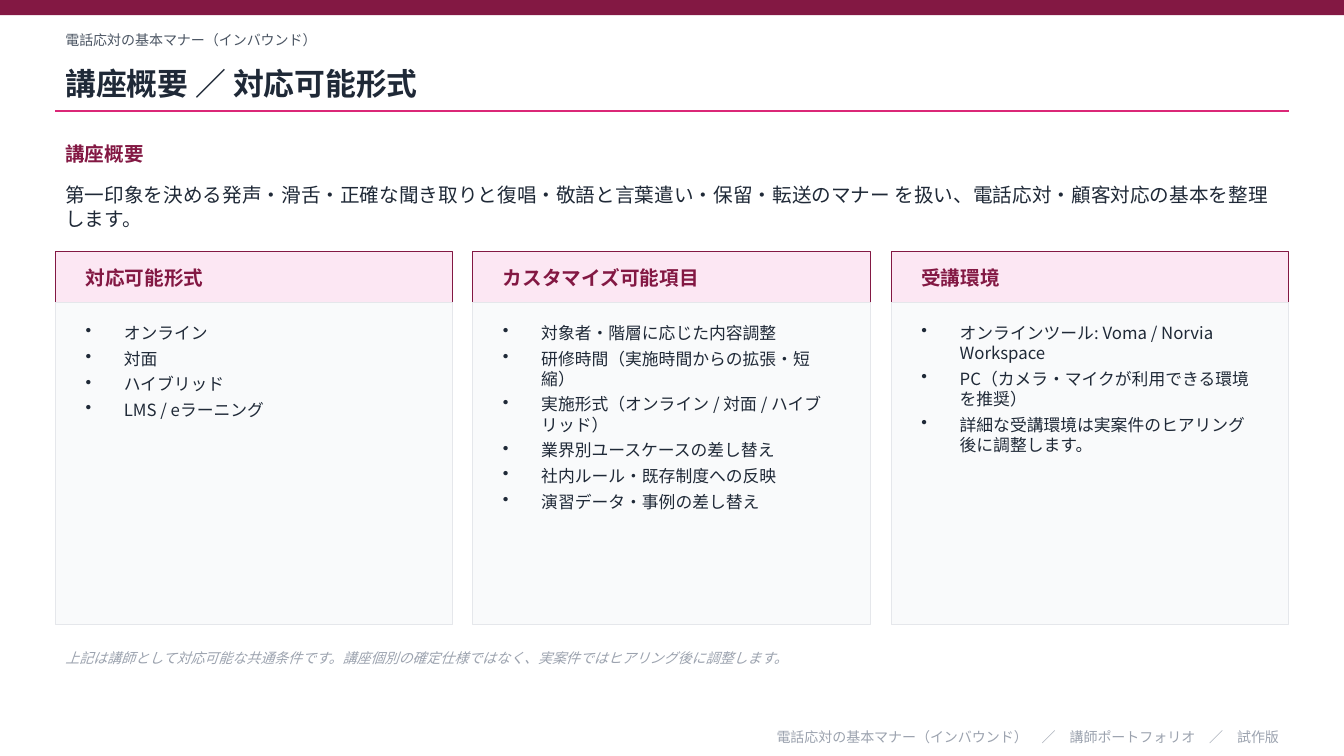
from typing import NamedTuple

from lxml import etree
from pptx import Presentation
from pptx import util as u
from pptx.dml.color import RGBColor
from pptx.enum import shapes, text
from pptx.oxml.ns import qn

EMU_PER_PX = 9144
FONT = "Noto Sans CJK JP"
COLOURS = {
    "wine": "831843",
    "pink": "DB2777",
    "blush": "FCE7F3",
    "panel": "F9FAFB",
    "border": "E5E7EB",
    "ink": "1F2937",
    "slate": "4B5563",
    "muted": "9CA3AF",
}
SLIDE_WIDTH, SLIDE_HEIGHT = 1333, 750
MARGIN, CONTENT_WIDTH = 55, 1223
CARD_WIDTH, CARD_PADDING = 394, 20
HEADER_TOP, HEADER_HEIGHT = 250, 50
BODY_TOP, BODY_HEIGHT = 300, 320
BULLET_INDENT = 38


class Box(NamedTuple):
    left: int
    top: int
    width: int
    height: int


class Line(NamedTuple):
    top: int
    height: int
    content: str
    size: int
    colour: str
    bold: bool = False
    italic: bool = False
    align: text.PP_ALIGN = text.PP_ALIGN.LEFT


class Card(NamedTuple):
    title: str
    items: list[str]


COURSE = "電話応対の基本マナー（インバウンド）"
LINES = [
    Line(25, 30, COURSE, 10, "slate"),
    Line(55, 55, "講座概要 ／ 対応可能形式", 22, "ink", bold=True),
    Line(135, 35, "講座概要", 14, "wine", bold=True),
    Line(175, 60, "第一印象を決める発声・滑舌・正確な聞き取りと復唱・敬語と言葉遣い・保留・転送のマナー "
         "を扱い、電話応対・顧客対応の基本を整理します。", 14, "ink"),
    Line(635, 35, "上記は講師として対応可能な共通条件です。講座個別の確定仕様ではなく、"
         "実案件ではヒアリング後に調整します。", 10, "muted", italic=True),
    Line(720, 22, f"{COURSE}　／　講師ポートフォリオ　／　試作版", 10, "muted",
         align=text.PP_ALIGN.RIGHT),
]
CARDS = [
    Card("対応可能形式", ["オンライン", "対面", "ハイブリッド", "LMS / eラーニング"]),
    Card("カスタマイズ可能項目", [
        "対象者・階層に応じた内容調整",
        "研修時間（実施時間からの拡張・短縮）",
        "実施形式（オンライン / 対面 / ハイブリッド）",
        "業界別ユースケースの差し替え",
        "社内ルール・既存制度への反映",
        "演習データ・事例の差し替え",
    ]),
    Card("受講環境", [
        "オンラインツール: Voma / Norvia Workspace",
        "PC（カメラ・マイクが利用できる環境を推奨）",
        "詳細な受講環境は実案件のヒアリング後に調整します。",
    ]),
]


def px(length: int) -> u.Emu:
    return u.Emu(length * EMU_PER_PX)


def rgb(name: str) -> RGBColor:
    return RGBColor.from_string(COLOURS[name])


def add_rectangle(slide, box: Box, fill: str, line: str | None = None) -> None:
    shape = slide.shapes.add_shape(shapes.MSO_SHAPE.RECTANGLE, *map(px, box))
    shape.shadow.inherit = False
    shape.fill.solid()
    shape.fill.fore_color.rgb = rgb(fill)
    if line:
        shape.line.color.rgb = rgb(line)
        shape.line.width = u.Pt(0.75)
    else:
        shape.line.fill.background()


def add_bullet(paragraph) -> None:
    properties = paragraph._p.get_or_add_pPr()
    properties.set("marL", str(px(BULLET_INDENT)))
    properties.set("indent", str(-px(BULLET_INDENT)))
    etree.SubElement(properties, qn("a:buChar"), char="•")
    paragraph.space_after = u.Pt(4)


def add_text(slide, box: Box, paragraphs: list[str], *, size: int, colour: str,
             bold: bool = False, italic: bool = False, bullets: bool = False,
             align: text.PP_ALIGN = text.PP_ALIGN.LEFT,
             anchor: text.MSO_ANCHOR = text.MSO_ANCHOR.MIDDLE) -> None:
    frame = slide.shapes.add_textbox(*map(px, box)).text_frame
    frame.word_wrap = True
    frame.vertical_anchor = anchor
    for index, content in enumerate(paragraphs):
        paragraph = frame.add_paragraph() if index else frame.paragraphs[0]
        if bullets:
            add_bullet(paragraph)
        paragraph.alignment = align
        run = paragraph.add_run()
        run.text = content
        run.font.size = u.Pt(size)
        run.font.bold = bold
        run.font.italic = italic
        run.font.color.rgb = rgb(colour)
        run.font.name = FONT
        etree.SubElement(run._r.get_or_add_rPr(), qn("a:ea"), typeface=FONT)


def add_rule(slide, top: int) -> None:
    rule = slide.shapes.add_connector(
        shapes.MSO_CONNECTOR.STRAIGHT,
        px(MARGIN), px(top), px(MARGIN + CONTENT_WIDTH), px(top))
    rule.line.color.rgb = rgb("pink")
    rule.line.width = u.Pt(1)
    etree.SubElement(rule._element.spPr, qn("a:effectLst"))


def add_card(slide, left: int, card: Card) -> None:
    text_left, text_width = left + CARD_PADDING, CARD_WIDTH - 2 * CARD_PADDING
    add_rectangle(slide, Box(left, HEADER_TOP, CARD_WIDTH, HEADER_HEIGHT), "blush", "wine")
    add_text(slide, Box(text_left, HEADER_TOP, text_width, HEADER_HEIGHT), [card.title],
             size=14, colour="wine", bold=True)
    add_rectangle(slide, Box(left, BODY_TOP, CARD_WIDTH, BODY_HEIGHT), "panel", "border")
    add_text(slide, Box(text_left, BODY_TOP + 15, text_width, BODY_HEIGHT - 35), card.items,
             size=12, colour="ink", bullets=True, anchor=text.MSO_ANCHOR.TOP)


def main() -> None:
    presentation = Presentation()
    presentation.slide_width = px(SLIDE_WIDTH)
    presentation.slide_height = px(SLIDE_HEIGHT)
    slide = presentation.slides.add_slide(presentation.slide_layouts[6])
    add_rectangle(slide, Box(0, 0, SLIDE_WIDTH, 15), "wine")
    add_rule(slide, 110)
    for line in LINES:
        add_text(slide, Box(MARGIN, line.top, CONTENT_WIDTH, line.height), [line.content],
                 size=line.size, colour=line.colour, bold=line.bold,
                 italic=line.italic, align=line.align)
    for index, card in enumerate(CARDS):
        offset = index * (CONTENT_WIDTH - CARD_WIDTH) // (len(CARDS) - 1)
        add_card(slide, MARGIN + offset, card)
    presentation.save("out.pptx")


if __name__ == "__main__":
    main()
